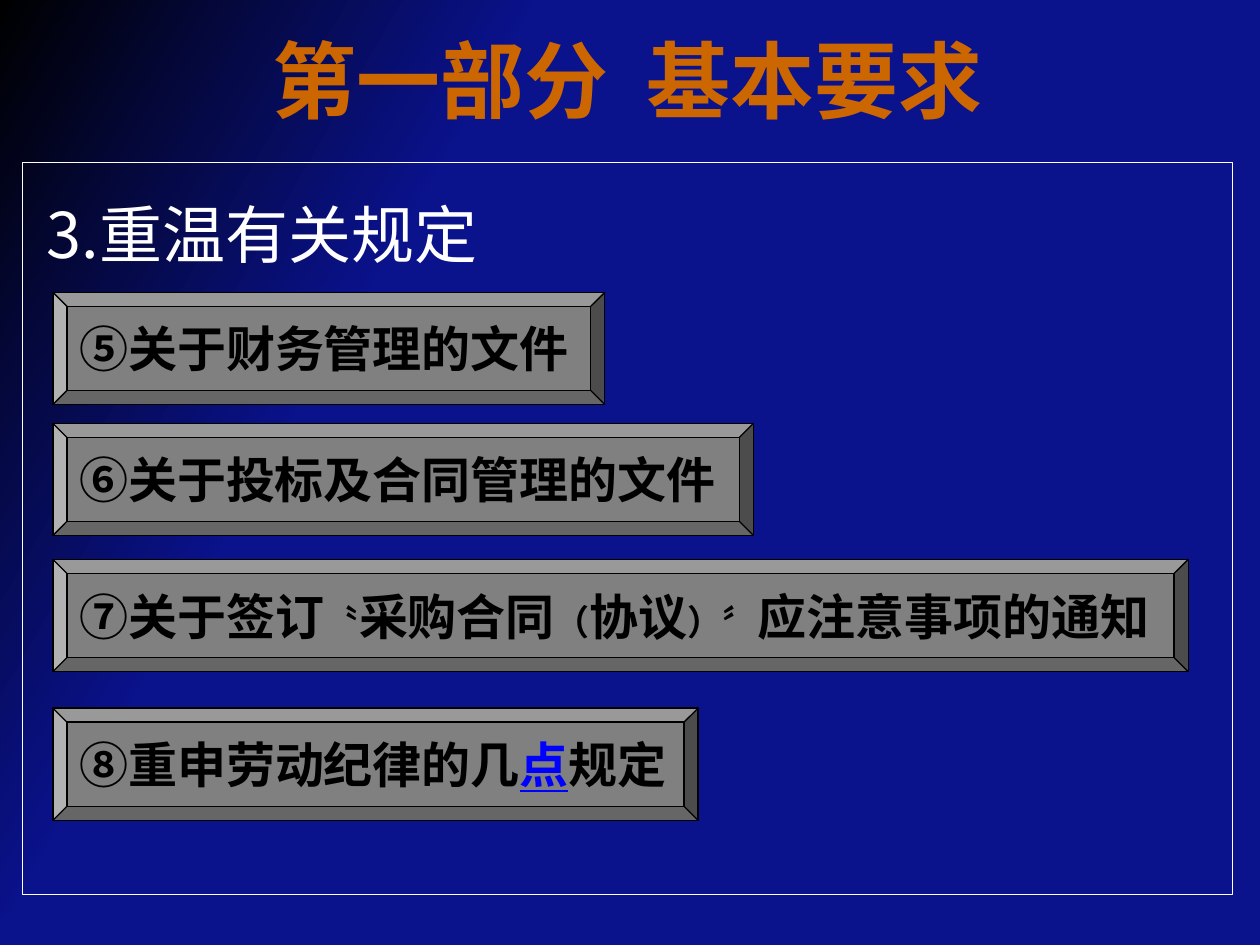
from pptx import Presentation
from pptx.dml.color import RGBColor
from pptx.enum.shapes import MSO_SHAPE
from pptx.enum.text import MSO_ANCHOR, PP_ALIGN
from pptx.oxml.ns import qn
from pptx.util import Inches, Pt
from lxml.etree import SubElement

FONT = "Noto Sans CJK SC"
COLORS = {"dark": "000000", "blue": "0A128C", "title": "CC6600", "text": "FFFFFF",
          "button": "808080", "ink": "000000", "link": "0000FF"}

TITLE = "第一部分  基本要求"
HEADING = "3.重温有关规定"
SMALL = {"size": Pt(20)}
LINK = {"color": "link", "underline": True}
# top, width, runs of (text, format changes)
BUTTONS = [
    (2.32, 4.38, [("⑤关于财务管理的文件", {})]),
    (3.36, 5.56, [("⑥关于投标及合同管理的文件", {})]),
    (4.44, 9.01, [("⑦关于签订", {}), ("〝", SMALL), ("采购合同", {}), ("（", SMALL),
                  ("协议", {}), ("）〞", SMALL), ("应注意事项的通知", {})]),
    (5.62, 5.12, [("⑧重申劳动纪律的几", {}), ("点", LINK), ("规定", {})]),
]
BUTTON_LEFT, BUTTON_HEIGHT = 0.42, 0.89
PANEL_LEFT, PANEL_WIDTH = 0.18, 9.6


def rgb(name):
    return RGBColor.from_string(COLORS[name])


def add_run(p, text, color, **formats):
    r = p.add_run()
    r.text = text
    r.font.name = FONT
    SubElement(r.font._element, qn("a:ea"), typeface=FONT)
    r.font.color.rgb = rgb(color)
    for key, value in formats.items():
        setattr(r.font, key, value)


def add_box(s, shape, box, line=None, fill=None, **frame):
    """Add a shape and return its first paragraph."""
    sp = s.shapes.add_shape(shape, *map(Inches, box))
    sp.shadow.inherit = False
    if fill:
        sp.fill.solid()
        sp.fill.fore_color.rgb = rgb(fill)
    else:
        sp.fill.background()
    if line:
        sp.line.color.rgb = rgb(line)
        sp.line.width = Pt(0.75)
    else:
        sp.line.fill.background()
    for key, value in frame.items():
        setattr(sp.text_frame, key, value)
    p = sp.text_frame.paragraphs[0]
    p.alignment = PP_ALIGN.LEFT
    return p


prs = Presentation()
prs.slide_width, prs.slide_height = Inches(10), Inches(7.5)
s = prs.slides.add_slide(prs.slide_layouts[6])

bg = s.background.fill
bg.gradient()
bg.gradient_angle = 330
for stop, (position, color) in zip(bg.gradient_stops, [(0, "dark"), (0.3, "blue")]):
    stop.position = position
    stop.color.rgb = rgb(color)

p = add_box(s, MSO_SHAPE.RECTANGLE, (PANEL_LEFT, 0, PANEL_WIDTH, 1.25),
            word_wrap=True, vertical_anchor=MSO_ANCHOR.MIDDLE)
p.alignment = PP_ALIGN.CENTER
add_run(p, TITLE, "title", size=Pt(48), bold=True)

p = add_box(s, MSO_SHAPE.RECTANGLE, (PANEL_LEFT, 1.29, PANEL_WIDTH, 5.81), line="text",
            word_wrap=True, vertical_anchor=MSO_ANCHOR.TOP,
            margin_left=Inches(0.19), margin_top=Inches(0.26))
add_run(p, HEADING, "text", size=Pt(36))

for top, width, runs in BUTTONS:
    p = add_box(s, MSO_SHAPE.BEVEL, (BUTTON_LEFT, top, width, BUTTON_HEIGHT),
                line="ink", fill="button",
                word_wrap=False, vertical_anchor=MSO_ANCHOR.MIDDLE)
    for text, changes in runs:
        add_run(p, text, **{"color": "ink", "size": Pt(28), "bold": True, **changes})

prs.save("out.pptx")
